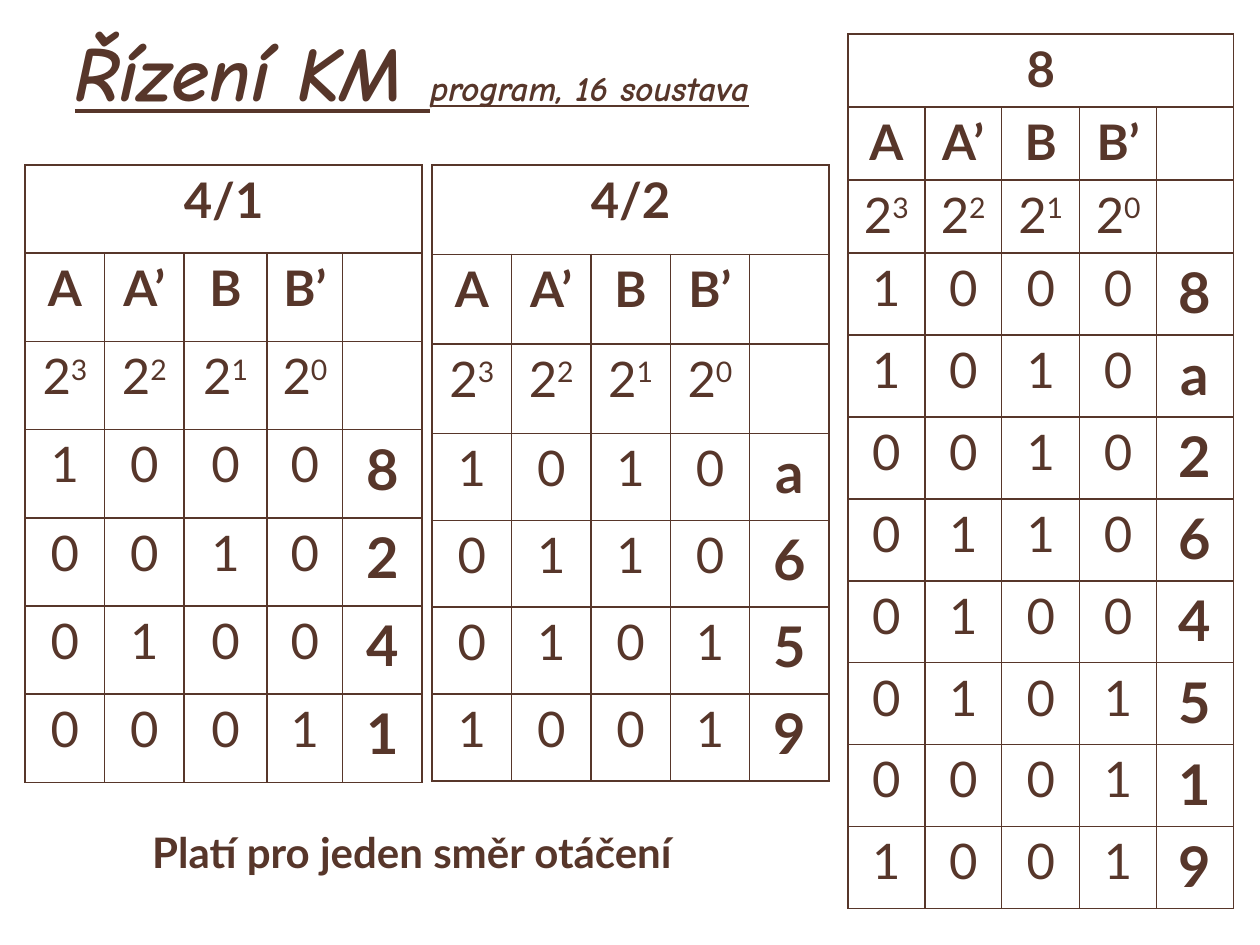
from lxml import etree
from pptx import Presentation
from pptx import util as u
from pptx.dml.color import RGBColor
from pptx.enum import text
from pptx.oxml import ns

BROWN = RGBColor(0x57, 0x36, 0x2A)
BODY_FONT = "Lato"
TITLE_FONT = "Comic Neue"
HEADINGS = ["A", "A’", "B", "B’"]
HEADER_ROWS = 3


def add_run(para, words, size, bold=False, font=BODY_FONT):
    span = para.add_run()
    span.text = words
    span.font.name = font
    span.font.size = u.Pt(size)
    span.font.bold = bold
    span.font.color.rgb = BROWN
    return span


def space_before(para, percent):
    """Set the space above a paragraph as a share of its line height."""
    spacing = etree.Element(ns.qn("a:spcBef"))
    etree.SubElement(spacing, ns.qn("a:spcPct"), val=str(percent * 1000))
    para._p.get_or_add_pPr().insert(0, spacing)


def add_borders(cell):
    properties = cell._tc.get_or_add_tcPr()
    for position, side in enumerate(("lnL", "lnR", "lnT", "lnB")):
        line = etree.Element(ns.qn(f"a:{side}"), w=str(u.Pt(1)))
        fill = etree.SubElement(line, ns.qn("a:solidFill"))
        etree.SubElement(fill, ns.qn("a:srgbClr"), val=str(BROWN))
        properties.insert(position, line)


def write_cell(cell, words, size=28, bold=False, power=None):
    para = cell.text_frame.paragraphs[0]
    para.alignment = text.PP_ALIGN.CENTER
    space_before(para, 20)
    add_run(para, words, size, bold)
    if power is not None:
        exponent = add_run(para, str(power), size)
        exponent.font._element.set("baseline", "30000")


def add_code_table(page, box, heading, codes, widths, header_height, code_height):
    """Add a table that spells each hexadecimal code in four bits."""
    row_count = HEADER_ROWS + len(codes)
    frame = page.shapes.add_table(row_count, len(widths), *map(u.Inches, box))
    table = frame.table
    table.first_row = table.horz_banding = False
    for column, width in zip(table.columns, widths):
        column.width = u.Inches(width)
    for index, row in enumerate(table.rows):
        row.height = u.Inches(header_height if index < HEADER_ROWS else code_height)
    for cell in table.iter_cells():
        cell.margin_left = cell.margin_right = u.Inches(0.04)
        cell.margin_top = cell.margin_bottom = u.Inches(0.04)
        cell.fill.background()
        add_borders(cell)

    table.cell(0, 0).merge(table.cell(0, len(widths) - 1))
    write_cell(table.cell(0, 0), heading, bold=True)
    for column, name in enumerate(HEADINGS):
        write_cell(table.cell(1, column), name, bold=True)
        write_cell(table.cell(2, column), "2", power=len(HEADINGS) - 1 - column)
    for row, code in enumerate(codes, HEADER_ROWS):
        for column, bit in enumerate(f"{int(code, 16):04b}"):
            write_cell(table.cell(row, column), bit)
        write_cell(table.cell(row, len(HEADINGS)), code, size=32, bold=True)


def add_title(page):
    title = page.shapes.title
    title.left, title.top, title.width, title.height = map(
        u.Inches, (0.12, 0.13, 6.3, 0.86))
    title.text_frame.auto_size = text.MSO_AUTO_SIZE.NONE
    title.text_frame.vertical_anchor = text.MSO_ANCHOR.MIDDLE
    para = title.text_frame.paragraphs[0]
    para.alignment = text.PP_ALIGN.CENTER
    for words, size in (("Řízení KM ", 44), ("program, 16 soustava", 20)):
        span = add_run(para, words, size, True, TITLE_FONT)
        span.font.italic = span.font.underline = True


def add_caption(page, box, words):
    caption = page.shapes.add_textbox(*map(u.Inches, box)).text_frame
    caption.word_wrap = True
    caption.auto_size = text.MSO_AUTO_SIZE.SHAPE_TO_FIT_TEXT
    para = caption.paragraphs[0]
    para.alignment = text.PP_ALIGN.CENTER
    space_before(para, 50)
    add_run(para, words, 24, True)


def main():
    deck = Presentation()
    deck.slide_width, deck.slide_height = u.Inches(10), u.Inches(7.5)
    page = deck.slides.add_slide(deck.slide_layouts.get_by_name("Title Only"))
    add_title(page)
    add_code_table(page, (0.2, 1.31, 3.15, 4.88), "4/1", "8241",
                   [0.63, 0.63, 0.66, 0.6, 0.63], 0.7, 0.7)
    add_code_table(page, (3.43, 1.31, 3.15, 4.88), "4/2", "a659",
                   [0.63] * 5, 0.71, 0.69)
    add_code_table(page, (6.73, 0.27, 3.07, 6.93), "8", "8a264519",
                   [0.61, 0.61, 0.62, 0.61, 0.61], 0.58, 0.65)
    add_caption(page, (0.67, 6.51, 5.2, 0.5), "Platí pro jeden směr otáčení")
    deck.save("out.pptx")


if __name__ == "__main__":
    main()
